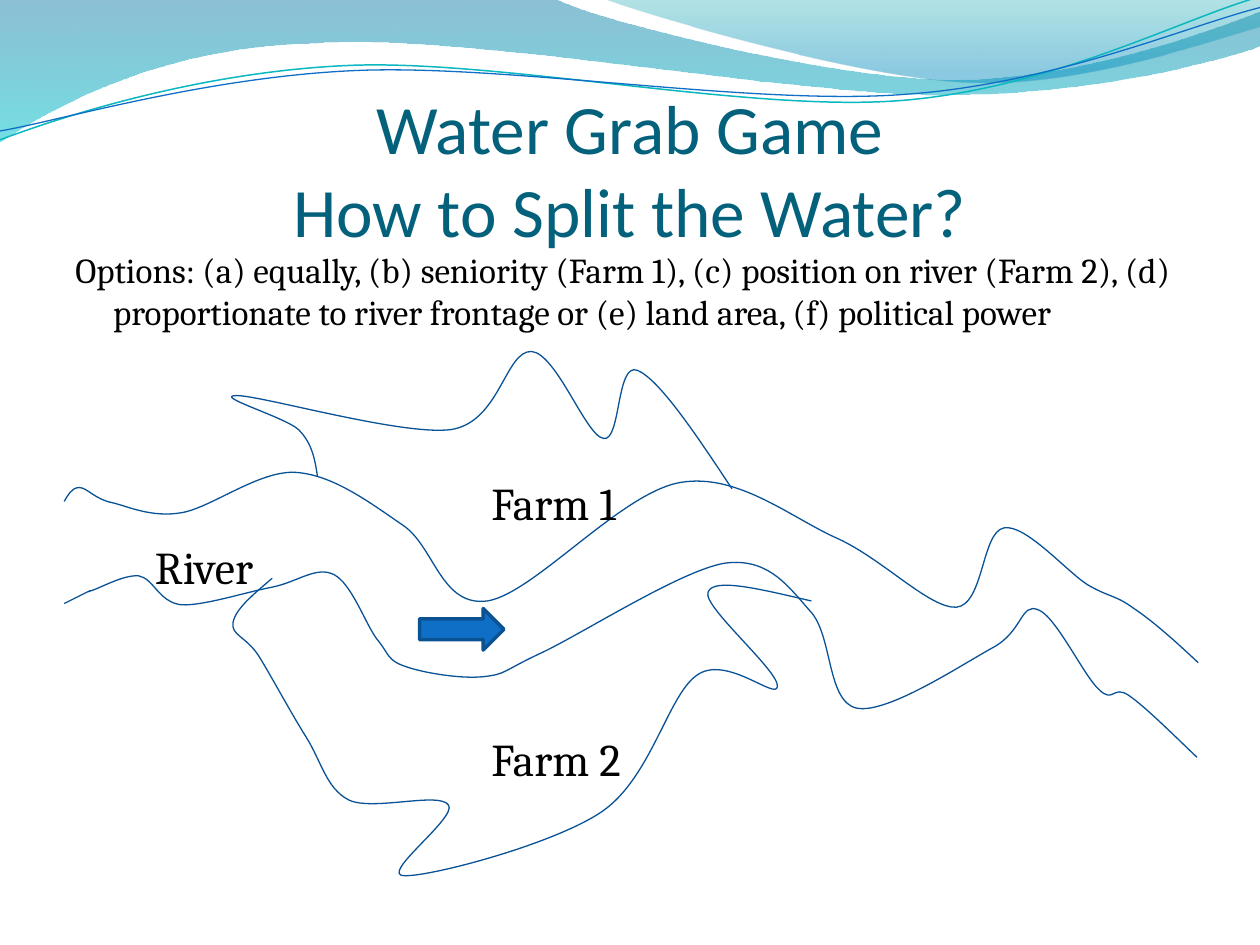
from collections import namedtuple

from lxml import etree
from pptx import Presentation
from pptx.dml.color import RGBColor
from pptx.enum.shapes import MSO_SHAPE
from pptx.enum.text import MSO_ANCHOR, PP_ALIGN
from pptx.oxml.ns import qn
from pptx.util import Inches, Pt

RIGHT_ARROW = MSO_SHAPE.RIGHT_ARROW
TOP, MIDDLE, BOTTOM = MSO_ANCHOR.TOP, MSO_ANCHOR.MIDDLE, MSO_ANCHOR.BOTTOM
LEFT, CENTER = PP_ALIGN.LEFT, PP_ALIGN.CENTER

BLACK = RGBColor(0x00, 0x00, 0x00)
TITLE_TEAL = RGBColor(0x04, 0x61, 0x7B)
WAVE_BLUE = RGBColor(0x00, 0x74, 0xA1)
WAVE_CYAN = RGBColor(0x00, 0xC6, 0xCF)
CREST_TEAL = RGBColor(0x00, 0xA1, 0xA9)
CREST_BLUE = RGBColor(0x00, 0x8B, 0xBF)
LINE_TEAL = RGBColor(0x0A, 0xB8, 0xBF)
BLUE = RGBColor(0x0F, 0x6F, 0xC6)
BANK_BLUE = RGBColor(0x09, 0x52, 0x95)
ARROW_EDGE = RGBColor(0x0B, 0x52, 0x92)

COLUMNS = 1000
Box = namedtuple("Box", "left top width height")

WAVE = [(0, 0), (440, -1), (476, 17, 664, 63, 758, 63), (853, 63, 958, 26, 1000, 9),
        (1001, 36), (983, 44, 870, 76, 746, 75), (622, 75, 382, 28, 257, 34),
        (129, 36, 46, 83, -1, 113)]
CREST = [(479, -1), (509, 11, 682, 62, 769, 65), (856, 69, 961, 32, 1000, 21), (1000, 0)]
TEAL_STRAND = [(0, 111), (48, 93, 158, 57, 277, 52), (395, 47, 593, 89, 713, 80),
               (833, 71, 938, 15, 998, -2)]
BLUE_STRAND = [(0, 104), (47, 96, 164, 61, 283, 56), (403, 51, 597, 84, 717, 75),
               (836, 67, 941, 21, 1000, 6)]
NORTH_BANK = [(51, 398), (54, 393, 57, 387, 63, 387), (69, 387, 75, 396, 89, 399),
              (102, 402, 120, 411, 144, 407), (168, 403, 206, 373, 235, 375),
              (265, 377, 295, 400, 320, 417), (345, 434, 350, 482, 387, 477),
              (424, 471, 493, 391, 540, 383), (586, 375, 629, 412, 666, 428),
              (702, 445, 738, 483, 759, 482), (781, 480, 779, 422, 797, 419),
              (814, 416, 846, 453, 863, 464), (880, 474, 885, 472, 900, 483),
              (915, 493, 933, 509, 951, 526)]
SOUTH_BANK = [(51, 479), (71, 469), (74, 468, 66, 471, 72, 469),
              (79, 467, 98, 456, 110, 457), (122, 459, 126, 478, 144, 480),
              (161, 481, 195, 470, 216, 466), (236, 462, 251, 449, 265, 456),
              (279, 463, 290, 495, 299, 507), (309, 519, 307, 524, 322, 529),
              (336, 534, 366, 539, 384, 537), (402, 535, 398, 533, 430, 518),
              (462, 503, 540, 453, 575, 447), (610, 442, 626, 466, 643, 485),
              (661, 504, 656, 557, 680, 562), (704, 567, 764, 527, 788, 514),
              (812, 501, 810, 478, 824, 484), (838, 489, 860, 536, 872, 547),
              (884, 559, 883, 543, 896, 552), (909, 561, 929, 581, 950, 601)]
FARM_1 = [(252, 378), (250, 365, 248, 352, 237, 341), (226, 331, 168, 314, 188, 314),
          (208, 314, 319, 346, 358, 341), (397, 335, 401, 278, 422, 279),
          (442, 281, 465, 346, 479, 348), (493, 351, 489, 287, 506, 294),
          (523, 301, 552, 344, 581, 388)]
FARM_2 = [(216, 459), (202, 471, 187, 483, 185, 494), (183, 504, 195, 505, 205, 520),
          (215, 536, 231, 566, 243, 585), (255, 604, 259, 626, 277, 635),
          (296, 644, 349, 628, 356, 639), (363, 649, 300, 695, 321, 695),
          (341, 696, 440, 670, 478, 644), (517, 617, 530, 552, 553, 536),
          (576, 519, 616, 556, 617, 545), (619, 533, 557, 481, 562, 470),
          (566, 458, 605, 468, 644, 477)]


def part(box, left, top, width, height):
    """Return the part of a box given by shares of its size."""
    return Box(int(box.left + left * box.width), int(box.top + top * box.height),
               int(width * box.width), int(height * box.height))


def add_text(slide, box, text, *, size, font="Cambria", color=BLACK, align=LEFT,
             anchor=TOP, hanging=0, inset=0):
    """Add a text box with one formatted paragraph."""
    frame = slide.shapes.add_textbox(*box).text_frame
    frame.word_wrap = True
    frame.vertical_anchor = anchor
    frame.margin_left = frame.margin_right = inset
    frame.margin_top, frame.margin_bottom = Inches(0.05), 0
    paragraph = frame.paragraphs[0]
    paragraph.text = text
    paragraph.alignment = align
    for run in paragraph.runs:
        run.font.name, run.font.size = font, Pt(size)
        run.font.color.rgb = color
    if hanging:
        properties = paragraph._p.get_or_add_pPr()
        properties.set("marL", str(hanging))
        properties.set("indent", str(-hanging))


def add_curve(slide, box, segments, *, line=None, width=0.75, gradient=None):
    """Draw pairs as lines and sextuples as Bézier curves on the grid of a box."""
    (start, *rest) = segments
    builder = slide.shapes.build_freeform(*start, scale=box.width / COLUMNS)
    points = [segment[i:i + 2] for segment in rest for i in range(0, len(segment), 2)]
    builder.add_line_segments(points, close=gradient is not None)
    shape = builder.convert_to_shape(box.left, box.top)
    shape.shadow.inherit = False
    steps = iter(list(shape._element.iter(qn("a:lnTo"))))
    for segment in rest:
        step = next(steps)
        if len(segment) == 6:
            step.addprevious(curve := etree.Element(qn("a:cubicBezTo")))
            for member in (step, next(steps), next(steps)):
                curve.append(member[0])
                member.getparent().remove(member)
    if gradient:
        fill_gradient(shape, gradient)
    else:
        shape.fill.background()
    if line is None:
        shape.line.fill.background()
    else:
        shape.line.color.rgb, shape.line.width = line, Pt(width)


def fill_gradient(shape, stops):
    """Fill a shape downwards with stops of position, colour and opacity."""
    shape.fill.gradient()
    shape.fill.gradient_angle = 270
    for stop, (position, color, opacity) in zip(shape.fill.gradient_stops, stops):
        stop.position, stop.color.rgb = position, color
    for node, (_, _, opacity) in zip(shape._element.iter(qn("a:srgbClr")), stops):
        etree.SubElement(node, qn("a:alpha")).set("val", str(opacity * 1000))


def add_banner(slide, box):
    """Draw the waves along the top of a box."""
    add_curve(slide, box, WAVE, gradient=[(0, WAVE_BLUE, 45), (1, WAVE_CYAN, 55)])
    add_curve(slide, box, CREST, gradient=[(0, CREST_TEAL, 30), (0.8, CREST_BLUE, 45)])
    add_curve(slide, box, TEAL_STRAND, line=LINE_TEAL, width=0.85)
    add_curve(slide, box, BLUE_STRAND, line=BLUE)


def add_heading(slide, box):
    """Place the title and the options below it."""
    add_text(slide, part(box, 0.05, 0.11, 0.9, 0.156),
             "Water Grab Game\nHow to Split the Water?", size=39.6, font="Calibri",
             color=TITLE_TEAL, align=CENTER, anchor=BOTTOM)
    add_text(slide, part(box, 0.05, 0.256, 0.9, 0.1),
             "Options: (a) equally, (b) seniority (Farm 1), (c) position on river (Farm 2), "
             "(d) proportionate to river frontage or (e) land area, (f) political power",
             size=20, hanging=Inches(0.3), inset=Inches(0.1))


def add_river_map(slide, box):
    """Draw the river, the farms, their names and the flow arrow."""
    for outline in (NORTH_BANK, SOUTH_BANK, FARM_1, FARM_2):
        add_curve(slide, box, outline, line=BANK_BLUE)
    for name, left, top in (("Farm 1", 0.39, 0.493), ("River", 0.123, 0.561),
                            ("Farm 2", 0.39, 0.764)):
        add_text(slide, part(box, left, top, 0.14, 0.07), name, size=26, anchor=MIDDLE)
    arrow = slide.shapes.add_shape(RIGHT_ARROW, *part(box, 0.333, 0.644, 0.067, 0.044))
    arrow.shadow.inherit = False
    arrow.fill.solid()
    arrow.fill.fore_color.rgb = BLUE
    arrow.line.color.rgb, arrow.line.width = ARROW_EDGE, Pt(2)


def main():
    """Build and save the presentation."""
    presentation = Presentation()
    presentation.slide_width, presentation.slide_height = Inches(10), Inches(7.5)
    slide = presentation.slides.add_slide(presentation.slide_layouts[6])
    page = Box(0, 0, presentation.slide_width, presentation.slide_height)
    for add_region in (add_banner, add_heading, add_river_map):
        add_region(slide, page)
    presentation.save("out.pptx")


if __name__ == "__main__":
    main()
